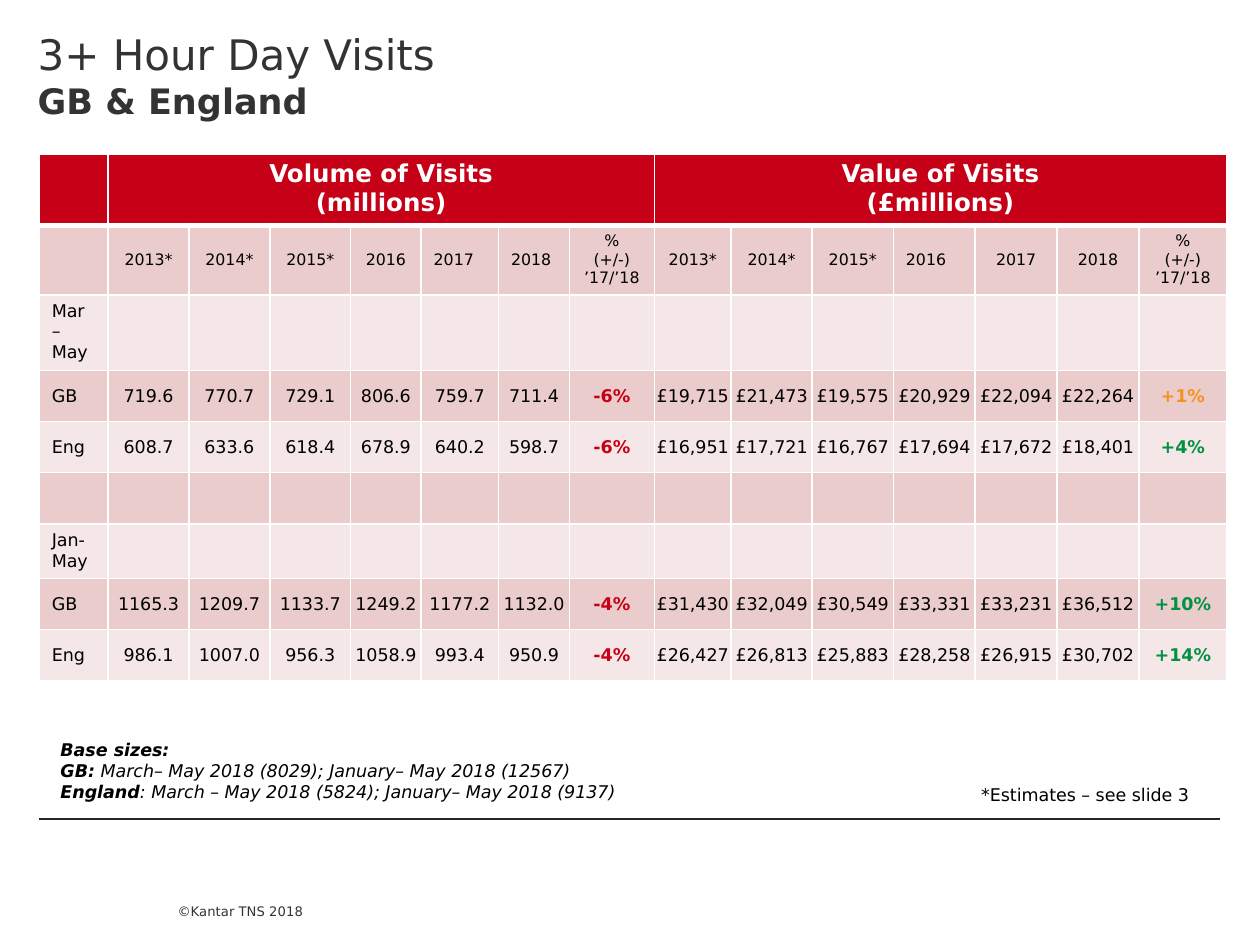
from lxml.etree import SubElement
from pptx import Presentation
from pptx.dml.color import RGBColor
from pptx.enum.shapes import MSO_CONNECTOR
from pptx.enum.text import MSO_ANCHOR, PP_ALIGN
from pptx.oxml.ns import qn
from pptx.util import Cm, Pt

THEME = {
    "font": "DejaVu Sans",
    "ink": "000000", "title": "333333", "rule": "262626", "white": "FFFFFF",
    "head": "C50017", "bands": ("F5E7E8", "EACCCC"),
    "down": "C50017", "flat": "F7911E", "up": "009242",
    "title_pt": 24, "subtitle_pt": 20, "head_pt": 14, "year_pt": 9,
    "body_pt": 10, "footer_pt": 7.5,
}

TITLE = ("3+ Hour Day Visits", "GB & England")
GROUPS = (["Volume of Visits", "(millions)"], ["Value of Visits", "(£millions)"])
YEARS = ["2013*", "2014*", "2015*", "2016", "2017", "2018"]
CHANGE = "%\n(+/-) ’17/’18"
LEFT_YEARS = {5, 6, 11}
ROWS = [
    ["Mar – May"],
    ["GB", "719.6", "770.7", "729.1", "806.6", "759.7", "711.4", "-6%",
     "£19,715", "£21,473", "£19,575", "£20,929", "£22,094", "£22,264", "+1%"],
    ["Eng", "608.7", "633.6", "618.4", "678.9", "640.2", "598.7", "-6%",
     "£16,951", "£17,721", "£16,767", "£17,694", "£17,672", "£18,401", "+4%"],
    [],
    ["Jan-May"],
    ["GB", "1165.3", "1209.7", "1133.7", "1249.2", "1177.2", "1132.0", "-4%",
     "£31,430", "£32,049", "£30,549", "£33,331", "£33,231", "£36,512", "+10%"],
    ["Eng", "986.1", "1007.0", "956.3", "1058.9", "993.4", "950.9", "-4%",
     "£26,427", "£26,813", "£25,883", "£28,258", "£26,915", "£30,702", "+14%"],
]
BASES = [
    [("Base sizes:\vGB:", True), (" March– May 2018 (8029); January– May 2018 (12567)", False)],
    [("England", True), (": March – May 2018 (5824); January– May 2018 (9137)", False)],
]
ESTIMATES = "*Estimates – see slide 3"
FOOTER = "©Kantar TNS 2018"

COL_WIDTHS = [1.39, 1.63, 1.63, 1.63, 1.42, 1.56, 1.43, 1.71,
              1.55, 1.63, 1.64, 1.65, 1.65, 1.65, 1.77]
ROW_HEIGHT = 1.03
LEFT = 0.79


def style(font, size, color, bold=False, italic=False):
    font.name, font.size = THEME["font"], Pt(size)
    font.bold, font.italic = bold, italic
    font.color.rgb = RGBColor.from_string(color)


def add_text(s, box, insets=(0.25, 0.13, 0.25, 0.13), wrap=True):
    tf = s.shapes.add_textbox(*map(Cm, box)).text_frame
    tf.word_wrap = wrap
    tf.margin_left, tf.margin_top, tf.margin_right, tf.margin_bottom = map(Cm, insets)
    return tf


def add_borders(cell, bottom=1):
    tc_pr = cell._tc.get_or_add_tcPr()
    for side, width in (("L", 1), ("R", 1), ("T", 1), ("B", bottom)):
        ln = SubElement(tc_pr, qn(f"a:ln{side}"), w=str(Pt(width)))
        SubElement(SubElement(ln, qn("a:solidFill")), qn("a:srgbClr"), val=THEME["white"])


def fill_cell(cell, text, size, color, fill, bold=False, align=PP_ALIGN.CENTER,
              anchor=MSO_ANCHOR.MIDDLE, tight=False, bottom=1):
    add_borders(cell, bottom)
    cell.fill.solid()
    cell.fill.fore_color.rgb = RGBColor.from_string(fill)
    cell.vertical_anchor = anchor
    if tight:
        cell.margin_left = cell.margin_right = cell.margin_top = Cm(0.03)
        cell.margin_bottom = 0
    cell.text_frame.text = text
    for p in cell.text_frame.paragraphs:
        p.alignment = align
        style(p.font, size, color, bold)


def change_color(text):
    value = int(text.rstrip("%"))
    return THEME["down" if value < 0 else "flat" if value <= 1 else "up"]


def add_visits_table(s):
    n_rows, n_cols = len(ROWS) + 2, len(COL_WIDTHS)
    span = len(YEARS) + 1
    table = s.shapes.add_table(n_rows, n_cols, Cm(LEFT), Cm(3.1),
                               Cm(sum(COL_WIDTHS)), Cm(n_rows * ROW_HEIGHT)).table
    table.first_row = table.horz_banding = False
    for col, width in zip(table.columns, COL_WIDTHS):
        col.width = Cm(width)
    for row in table.rows:
        row.height = Cm(ROW_HEIGHT)

    heads = {1 + i * span: "\n".join(lines) for i, lines in enumerate(GROUPS)}
    for c in range(n_cols):
        fill_cell(table.cell(0, c), heads.get(c, ""), THEME["head_pt"], THEME["white"],
                  THEME["head"], bold=True, anchor=MSO_ANCHOR.TOP, bottom=3)
    for c in heads:
        table.cell(0, c).merge(table.cell(0, c + span - 1))

    for c, text in enumerate([""] + (YEARS + [CHANGE]) * len(GROUPS)):
        fill_cell(table.cell(1, c), text, THEME["year_pt"], THEME["ink"], THEME["bands"][1],
                  align=PP_ALIGN.LEFT if c in LEFT_YEARS else PP_ALIGN.CENTER)

    for r, values in enumerate(ROWS, 2):
        for c in range(n_cols):
            text = values[c] if c < len(values) else ""
            change = text.endswith("%")
            fill_cell(table.cell(r, c), text, THEME["body_pt"],
                      change_color(text) if change else THEME["ink"],
                      THEME["bands"][r % 2], bold=change,
                      align=PP_ALIGN.CENTER if c else PP_ALIGN.LEFT,
                      anchor=MSO_ANCHOR.TOP if (r, c) == (2, 0) else MSO_ANCHOR.MIDDLE,
                      tight=c > 0)


def add_title(s):
    tf = add_text(s, (0, 0, 14.1, 3.56), (0.76, 0.58, 0.76, 0))
    sizes = (THEME["title_pt"], THEME["subtitle_pt"])
    for i, (text, size) in enumerate(zip(TITLE, sizes)):
        p = tf.add_paragraph() if i else tf.paragraphs[0]
        p.text = text
        style(p.font, size, THEME["title"], bold=i > 0)


def add_notes(s):
    tf = add_text(s, (0.97, 14.76, 21.44, 1.55))
    for i, runs in enumerate(BASES):
        p = tf.add_paragraph() if i else tf.paragraphs[0]
        for text, bold in runs:
            for j, part in enumerate(text.split("\v")):
                if j:
                    p.add_line_break()
                r = p.add_run()
                r.text = part
                style(r.font, THEME["body_pt"], THEME["ink"], bold, italic=True)

    tf = add_text(s, (19.53, 15.67, 4.88, 0.69), wrap=False)
    tf.text = ESTIMATES
    style(tf.paragraphs[0].font, THEME["body_pt"], THEME["ink"])


def add_footer(s):
    line = s.shapes.add_connector(MSO_CONNECTOR.STRAIGHT, Cm(LEFT), Cm(16.51),
                                  Cm(24.59), Cm(16.51))
    line.line.width = Pt(0.75)
    line.line.color.rgb = RGBColor.from_string(THEME["rule"])
    SubElement(line._element.spPr, qn("a:effectLst"))

    tf = add_text(s, (3.58, 17.58, 2.72, 1.47), (0, 0, 0, 0.74))
    tf.vertical_anchor = MSO_ANCHOR.BOTTOM
    tf.text = FOOTER
    style(tf.paragraphs[0].font, THEME["footer_pt"], THEME["title"])


def main():
    """Build the day visits slide and save it."""
    prs = Presentation()
    prs.slide_width, prs.slide_height = Cm(25.4), Cm(19.05)
    s = prs.slides.add_slide(prs.slide_layouts[6])
    add_footer(s)
    add_title(s)
    add_visits_table(s)
    add_notes(s)
    prs.save("out.pptx")


if __name__ == "__main__":
    main()
